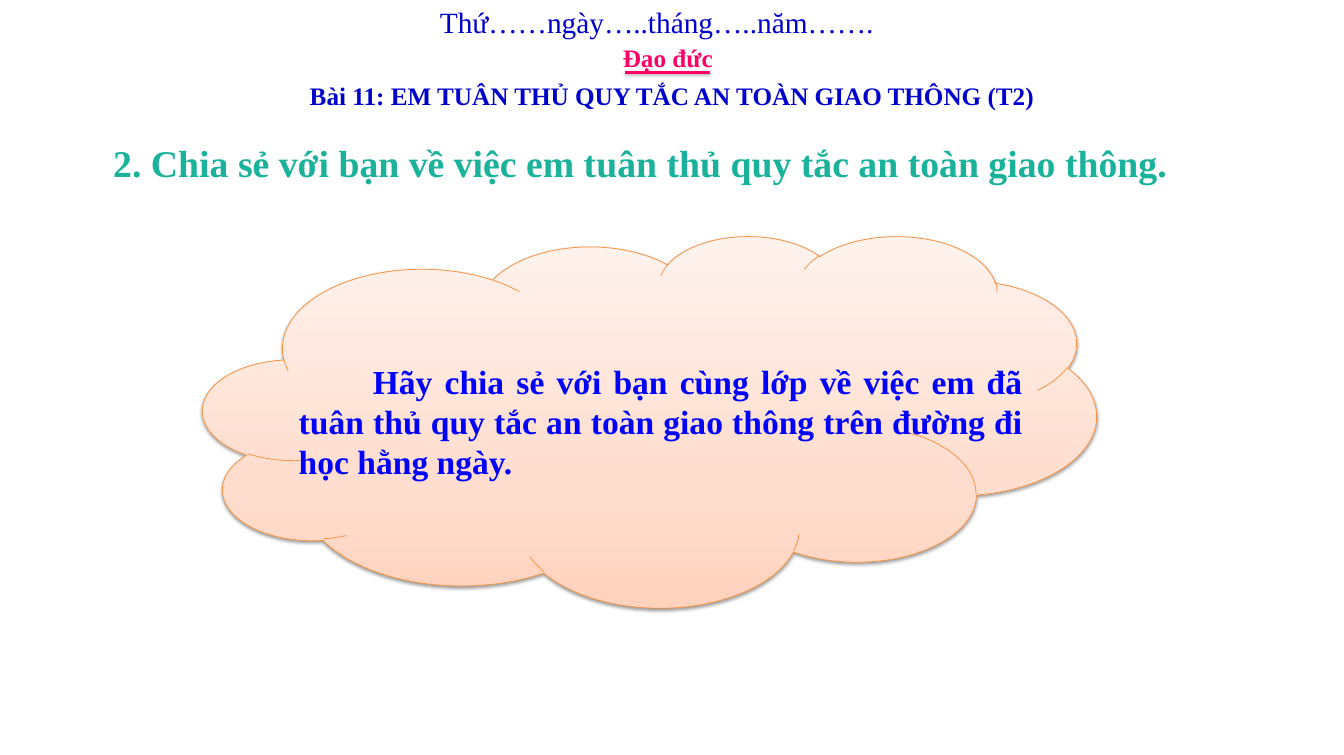
import copy

import pptx
import pptx.dml.color
import pptx.enum.shapes
import pptx.enum.text
import pptx.oxml
import pptx.oxml.ns
import pptx.util
from pptx.util import Cm

COLORS = {
    "white": "FFFFFF",
    "navy": "0000CC",
    "pink": "FF0066",
    "teal": "1BB29C",
    "blue": "0000FF",
    "orange": "F69240",
    "cloud_low": "FFD2BD",
    "cloud_mid": "FFDED0",
    "cloud_high": "FFF2ED",
    "shadow": "000000",
}
FONT = "Times New Roman"
ALIGN = pptx.enum.text.PP_ALIGN


def rgb(name):
    """Return the named palette colour."""
    return pptx.dml.color.RGBColor.from_string(COLORS[name])


def add_shadow(element):
    """Give a shape or connector a soft shadow straight below it."""
    spPr = element._element.spPr
    spPr.append(pptx.oxml.parse_xml(
        f'<a:effectLst {pptx.oxml.ns.nsdecls("a")}>'
        '<a:outerShdw blurRad="40000" dist="20000" dir="5400000" rotWithShape="0">'
        f'<a:srgbClr val="{COLORS["shadow"]}"><a:alpha val="38000"/></a:srgbClr>'
        '</a:outerShdw></a:effectLst>'))


def add_cloud(slide, left, top, width, height):
    """Draw the gradient cloud."""
    cloud = slide.shapes.add_shape(
        pptx.enum.shapes.MSO_SHAPE.CLOUD, left, top, width, height)
    cloud.fill.gradient()
    cloud.fill.gradient_angle = 90
    stop_list = cloud._element.spPr.find(".//" + pptx.oxml.ns.qn("a:gsLst"))
    stop_list.insert(1, copy.deepcopy(stop_list[0]))
    stops = [(0, "cloud_low"), (0.35, "cloud_mid"), (1, "cloud_high")]
    for stop, (position, color) in zip(cloud.fill.gradient_stops, stops):
        stop.position = position
        stop.color.rgb = rgb(color)
    cloud.line.color.rgb = rgb("orange")
    cloud.line.width = pptx.util.Pt(0.75)
    add_shadow(cloud)


def add_underline(slide, left, right, y):
    """Draw the rule under the subject name."""
    underline = slide.shapes.add_connector(
        pptx.enum.shapes.MSO_CONNECTOR.STRAIGHT, left, y, right, y)
    underline.line.color.rgb = rgb("pink")
    underline.line.width = pptx.util.Pt(2)
    add_shadow(underline)


def write(holder, text, size, color, align=ALIGN.LEFT, bold=True, wrap=True,
          spacing=1.0, indent=None):
    """Write one formatted paragraph into a text holder."""
    frame = holder.text_frame
    frame.word_wrap = wrap
    frame.auto_size = pptx.enum.text.MSO_AUTO_SIZE.SHAPE_TO_FIT_TEXT
    frame.vertical_anchor = pptx.enum.text.MSO_ANCHOR.TOP
    paragraph = frame.paragraphs[0]
    paragraph.alignment = align
    paragraph.line_spacing = spacing
    if indent is not None:
        paragraph._p.get_or_add_pPr().set("indent", str(indent))
    run = paragraph.add_run()
    run.text = text
    run.font.name = FONT
    run.font.size = pptx.util.Pt(size)
    run.font.bold = bold
    run.font.color.rgb = rgb(color)


def add_text(slide, left, top, width, height, text, size, color, **options):
    """Add a text box holding one paragraph."""
    box = slide.shapes.add_textbox(left, top, width, height)
    write(box, text, size, color, **options)
    return box


def set_lesson_title(slide, left, top, width, height, text):
    """Move and fill the title placeholder."""
    title = slide.shapes.title
    title.left, title.top, title.width, title.height = left, top, width, height
    frame = title.text_frame
    frame.margin_left = frame.margin_right = Cm(0.41)
    frame.margin_top = frame.margin_bottom = Cm(0.2)
    write(title, text, 24, "navy", align=ALIGN.CENTER)


def main():
    """Build the lesson slide and save it."""
    deck = pptx.Presentation()
    deck.slide_width, deck.slide_height = Cm(45.21), Cm(25.4)
    slide = deck.slides.add_slide(deck.slide_layouts[5])

    add_cloud(slide, Cm(6.83), Cm(7.92), Cm(30.05), Cm(12.5))
    date = add_text(slide, Cm(14.55), Cm(0), Cm(15.27), Cm(1.45),
                    "Thứ……ngày…..tháng…..năm…….", 28, "navy",
                    bold=False, wrap=False)
    date.fill.solid()
    date.fill.fore_color.rgb = rgb("white")
    add_text(slide, Cm(20.7), Cm(1.3), Cm(3.56), Cm(1.27),
             "Đạo đức", 24, "pink", wrap=False)
    add_underline(slide, Cm(21.03), Cm(23.88), Cm(2.44))
    set_lesson_title(slide, Cm(9.8), Cm(2.49), Cm(25.6), Cm(1.42),
                     "Bài 11: EM TUÂN THỦ QUY TẮC AN TOÀN GIAO THÔNG (T2)")
    add_text(slide, Cm(3.56), Cm(4.27), Cm(36.63), Cm(1.93),
             "2. Chia sẻ với bạn về việc em tuân thủ quy tắc an toàn giao thông.",
             36, "teal", align=ALIGN.JUSTIFY, spacing=1.2)
    add_text(slide, Cm(9.8), Cm(12.01), Cm(24.87), Cm(4.37),
             "Hãy chia sẻ với bạn cùng lớp về việc em đã tuân thủ quy tắc "
             "an toàn giao thông trên đường đi học hằng ngày.",
             32, "blue", align=ALIGN.JUSTIFY, indent=Cm(2.49))
    deck.save("out.pptx")


if __name__ == "__main__":
    main()
